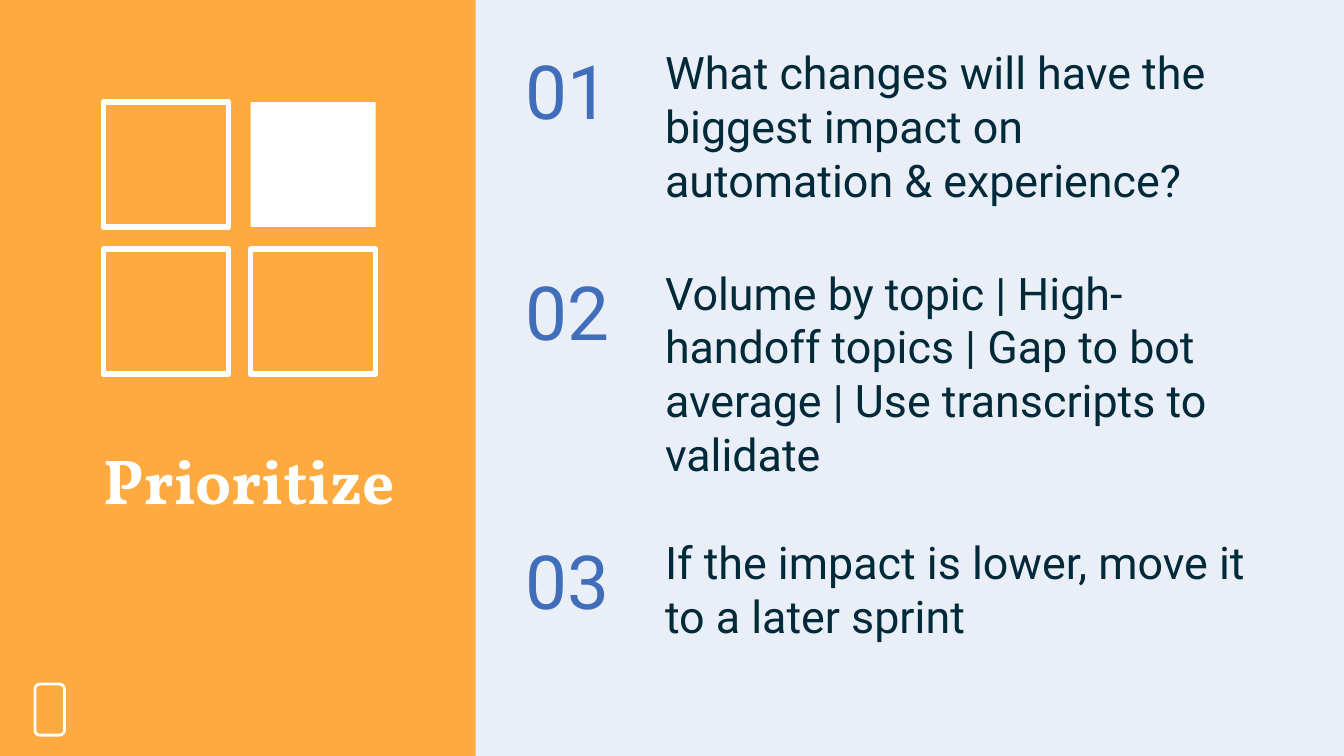
import pptx
import pptx.dml.color
import pptx.enum.shapes
import pptx.enum.text
import pptx.oxml
import pptx.util

COLORS = {
    "panel": "FDAB41",
    "page": "EAEFF7",
    "white": "FFFFFF",
    "number": "416EBA",
    "body": "00293A",
}
CELL = pptx.util.Inches(0.1)  # one grid column or row
COLUMNS, ROWS = 100, 56.25


def color(name):
    return pptx.dml.color.RGBColor.from_string(COLORS[name])


def cells(*lengths):
    """Turn grid lengths into slide lengths."""
    return [pptx.util.Emu(round(length * CELL)) for length in lengths]


class SlideBuilder:
    def __init__(self, deck):
        self.page = deck.slides.add_slide(deck.slide_layouts[6])
        background = self.page.background.fill
        background.solid()
        background.fore_color.rgb = color("page")

    def shape(self, left, top, width, height, fill=None, line=None, weight=3,
              kind=pptx.enum.shapes.MSO_SHAPE.RECTANGLE):
        shape = self.page.shapes.add_shape(kind, *cells(left, top, width, height))
        shape.shadow.inherit = False
        if fill:
            shape.fill.solid()
            shape.fill.fore_color.rgb = color(fill)
        else:
            shape.fill.background()
        if line:
            shape.line.color.rgb = color(line)
            shape.line.width = pptx.util.Pt(weight)
            join = pptx.oxml.parse_xml(
                '<a:round xmlns:a="http://schemas.openxmlformats.org/drawingml/2006/main"/>')
            shape.line._get_or_add_ln().append(join)
        else:
            shape.line.fill.background()

    def text(self, left, top, width, height, words, size, ink, font="Roboto", bold=False):
        box = self.page.shapes.add_textbox(*cells(left, top, width, height))
        frame = box.text_frame
        frame.word_wrap = True
        frame.vertical_anchor = pptx.enum.text.MSO_ANCHOR.TOP
        frame.margin_left = frame.margin_right = CELL
        frame.margin_top = frame.margin_bottom = CELL
        para = frame.paragraphs[0]
        para.text = words
        para.font.name = font
        para.font.size = pptx.util.Pt(size)
        para.font.bold = bold
        para.font.color.rgb = color(ink)

    def quadrants(self, left, top, side, step, filled):
        """Draw a two-by-two grid of squares with one (column, row) filled."""
        for row in range(2):
            for column in range(2):
                style = {"fill": "white"} if (column, row) == filled else {"line": "white"}
                self.shape(left + column * step, top + row * step, side, side, **style)

    def numbered_point(self, number, top, width, height, words):
        self.text(38.1, top, 10.4, 7.3, f"{number:02}", 40, "number")
        self.text(48.5, top, width, height, words, 24, "body")


def main():
    deck = pptx.Presentation()
    deck.slide_width, deck.slide_height = cells(COLUMNS, ROWS)
    slide = SlideBuilder(deck)

    slide.shape(0, 0, 35.4, ROWS, fill="panel")
    slide.quadrants(7.7, 7.6, side=9.3, step=10.95, filled=(1, 0))
    slide.text(6.7, 31.85, 28.7, 6, "Prioritize", 34, "white", font="Vollkorn", bold=True)
    slide.shape(2.6, 50.9, 2.2, 3.8, line="white", weight=1.5,
                kind=pptx.enum.shapes.MSO_SHAPE.ROUNDED_RECTANGLE)

    points = [
        (2.35, 44.4, 14.3,
         "What changes will have the biggest impact on automation & experience?"),
        (18.75, 44.4, 9.6,
         "Volume by topic | High-handoff topics | Gap to bot average"
         " | Use transcripts to validate"),
        (38.8, 45.4, 9.6, "If the impact is lower, move it to a later sprint"),
    ]
    for number, point in enumerate(points, start=1):
        slide.numbered_point(number, *point)

    deck.save("out.pptx")


if __name__ == "__main__":
    main()
